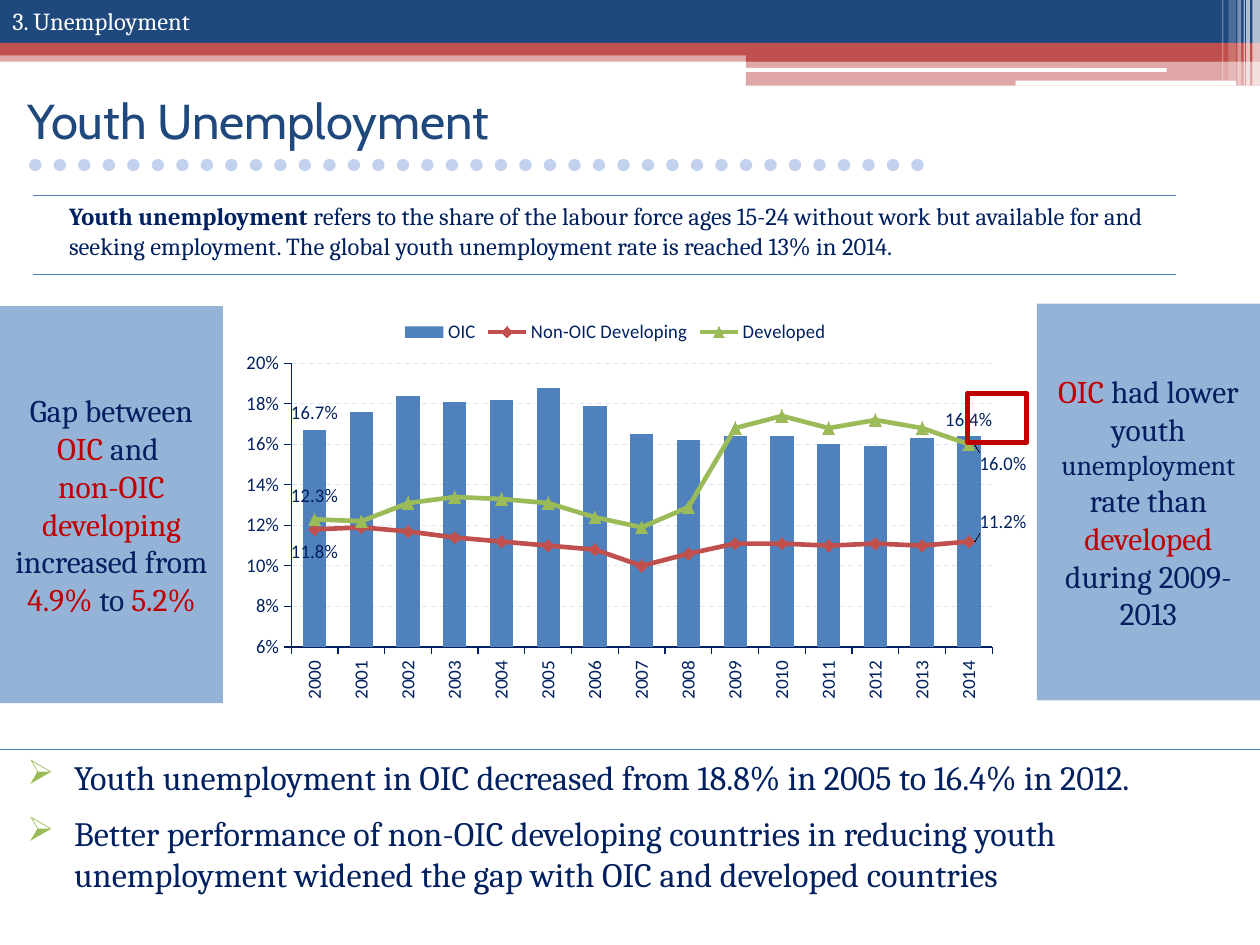
from lxml import etree
from pptx import Presentation
from pptx.chart.data import CategoryChartData
from pptx.dml.color import RGBColor
from pptx.enum.chart import XL_CHART_TYPE as ChartType, XL_LABEL_POSITION as Place
from pptx.enum.chart import XL_LEGEND_POSITION as LegendPlace, XL_MARKER_STYLE as Marker, XL_TICK_MARK as Tick
from pptx.enum.dml import MSO_LINE as Dash
from pptx.enum.shapes import MSO_CONNECTOR as Connector, MSO_SHAPE as Shape
from pptx.enum.text import MSO_ANCHOR as Anchor, PP_ALIGN as Align
from pptx.oxml import parse_xml
from pptx.oxml.ns import nsdecls, qn
from pptx.util import Inches, Pt

COLORS = {
    name: RGBColor.from_string(value) for name, value in {
        "white": "FFFFFF", "navy": "1F497D", "brick": "C0504D", "ink": "002060",
        "red": "C00000", "panel": "95B3D7", "blue": "4F81BD", "green": "9BBB59",
        "dots": "C2D1ED", "grid": "DCE6F2",
    }.items()
}

deck = Presentation()
deck.slide_width, deck.slide_height = Inches(10), Inches(7.5)
page = deck.slides.add_slide(deck.slide_layouts[6])


def add_block(at, fill=None, alpha=100, kind=Shape.RECTANGLE):
    block = page.shapes.add_shape(kind, *map(Inches, at))
    block.shadow.inherit = False
    block.line.fill.background()
    if fill is None:
        block.fill.background()
        return block
    block.fill.solid()
    block.fill.fore_color.rgb = COLORS[fill]
    if alpha < 100:
        color = block.fill._xPr.find(".//" + qn("a:srgbClr"))
        etree.SubElement(color, qn("a:alpha")).set("val", str(alpha * 1000))
    return block


def add_runs(para, runs, font="Cambria"):
    for text, size, color, bold in runs:
        span = para.add_run()
        span.text = text
        span.font.name, span.font.size, span.font.bold = font, Pt(size), bold
        span.font.color.rgb = COLORS[color]


for at, fill, alpha, kind in [
    ((0, 0.4, 10, 0.09), "brick", 50, Shape.RECTANGLE),
    ((0, 0, 10, 0.34), "navy", 100, Shape.RECTANGLE),
    ((0, 0.34, 10, 0.1), "brick", 100, Shape.RECTANGLE),
    ((5.92, 0.39, 4.08, 0.1), "brick", 100, Shape.RECTANGLE),
    ((5.92, 0.48, 4.08, 0.2), "brick", 50, Shape.RECTANGLE),
    ((5.91, 0.54, 3.35, 0.03), "white", 100, Shape.ROUNDED_RECTANGLE),
    ((8.06, 0.64, 1.75, 0.04), "white", 100, Shape.ROUNDED_RECTANGLE),
]:
    add_block(at, fill, alpha, kind)

for left, width, height, alpha in [
    (9.94, 0.06, 0.68, 65), (9.89, 0.03, 0.68, 65), (9.87, 0.01, 0.68, 60),
    (9.82, 0.03, 0.68, 40), (9.75, 0.06, 0.64, 20), (9.7, 0.01, 0.64, 30),
]:
    add_block((left, 0, width, height), "white", alpha)

for left, right, y, color, weight in [
    (0.28, 7.44, 1.31, "dots", 7), (0.26, 9.33, 1.55, "blue", 0.75),
    (0.26, 9.33, 2.18, "blue", 0.75), (0, 10, 5.95, "blue", 0.75),
]:
    rule = page.shapes.add_connector(Connector.STRAIGHT, Inches(left), Inches(y), Inches(right), Inches(y))
    rule.line.color.rgb, rule.line.width = COLORS[color], Pt(weight)
    if color == "dots":
        rule.line.dash_style = Dash.ROUND_DOT
        rule.line._get_or_add_ln().set("cap", "rnd")
    etree.SubElement(rule._element.spPr, qn("a:effectLst"))

for at, font, anchor, indent, before, runs in [
    ((0.12, 0.52, 9.37, 0.87), "Cabin", Anchor.MIDDLE, 0, 0, [("Youth Unemployment", 28, "navy", False)]),
    ((0, 0, 4.37, 0.34), "Cambria", Anchor.TOP, 0, 0, [("3. Unemployment", 14, "white", False)]),
    ((0.33, 1.55, 9, 0.63), "Cambria", Anchor.TOP, 0.12, 3, [
        ("Youth unemployment ", 14, "ink", True),
        ("refers to the share of the labour force ages 15-24 without work but available for and seeking "
         "employment. The global youth unemployment rate is reached 13% in 2014.", 14, "ink", False)]),
]:
    box = page.shapes.add_textbox(*map(Inches, at))
    box.text_frame.word_wrap = True
    box.text_frame.vertical_anchor = anchor
    para = box.text_frame.paragraphs[0]
    para.space_before = Pt(before)
    para._p.get_or_add_pPr().set("marL", str(Inches(indent)))
    add_runs(para, runs, font)

findings = page.shapes.add_textbox(Inches(0), Inches(5.95), Inches(10), Inches(1.55)).text_frame
findings.word_wrap = True
for index, text in enumerate([
    "Youth unemployment in OIC decreased from 18.8% in 2005 to 16.4% in 2012.",
    "Better performance of non-OIC developing countries in reducing youth unemployment widened "
    "the gap with OIC and developed countries",
]):
    para = findings.add_paragraph() if index else findings.paragraphs[0]
    para.space_before, para.space_after = Pt(3), Pt(6)
    props = para._p.get_or_add_pPr()
    props.set("marL", str(Inches(0.49)))
    props.set("indent", str(Inches(-0.37)))
    bullet_color = etree.SubElement(props, qn("a:buClr"))
    etree.SubElement(bullet_color, qn("a:srgbClr")).set("val", str(COLORS["green"]))
    etree.SubElement(props, qn("a:buChar")).set("char", "➢")
    add_runs(para, [(text, 19.5, "ink", False)])

for left, top, paragraphs in [
    (0, 2.43, [
        [("Gap between ", 18, "ink"), ("OIC", 18, "red"), (" and ", 18, "ink")],
        [("non-OIC developing ", 18, "red"), ("increased from ", 18, "ink"), ("4.9% ", 18, "red"),
         ("to ", 18, "ink"), ("5.2%", 18, "red")]]),
    (8.23, 2.41, [
        [("OIC ", 18, "red"), ("had lower youth ", 18, "ink"), ("unemployment ", 16, "ink"),
         ("rate than ", 18, "ink"), ("developed ", 18, "red"), ("during 2009-2013", 18, "ink")]]),
]:
    frame = add_block((left, top, 1.77, 3.15), "panel").text_frame
    frame.word_wrap = True
    frame.vertical_anchor = Anchor.MIDDLE
    for index, runs in enumerate(paragraphs):
        para = frame.add_paragraph() if index else frame.paragraphs[0]
        para.alignment = Align.CENTER
        add_runs(para, [(*run, False) for run in runs])

rates = {
    "OIC": [16.7, 17.6, 18.4, 18.1, 18.2, 18.8, 17.9, 16.5, 16.2, 16.4, 16.4, 16.0, 15.9, 16.3, 16.4],
    "Non-OIC Developing": [11.8, 11.9, 11.7, 11.4, 11.2, 11.0, 10.8, 10.0, 10.6, 11.1, 11.1, 11.0, 11.1, 11.0, 11.2],
    "Developed": [12.3, 12.2, 13.1, 13.4, 13.3, 13.1, 12.4, 11.9, 12.9, 16.8, 17.4, 16.8, 17.2, 16.8, 16.0],
}
data = CategoryChartData(number_format="0.0%")
data.categories = [str(year) for year in range(2000, 2015)]
for name, values in rates.items():
    data.add_series(name, [round(value / 100, 3) for value in values])
chart = page.shapes.add_chart(
    ChartType.COLUMN_CLUSTERED, Inches(1.85), Inches(2.43), Inches(6.3), Inches(3.15), data).chart
chart.has_title = False
chart.font.name, chart.font.size, chart.font.color.rgb = "Calibri", Pt(11), COLORS["ink"]
chart.has_legend = True
chart.legend.position, chart.legend.include_in_layout = LegendPlace.TOP, False

columns = chart.plots[0]
columns.gap_width, columns.vary_by_categories = 100, False
bars = columns._element
line_plot = parse_xml(
    f'<c:lineChart {nsdecls("c")}><c:grouping val="standard"/><c:varyColors val="0"/>'
    '<c:marker val="1"/></c:lineChart>')
plot_marker = line_plot.find(qn("c:marker"))
for series_xml in bars.findall(qn("c:ser"))[1:]:
    for invert in series_xml.findall(qn("c:invertIfNegative")):
        series_xml.remove(invert)
    plot_marker.addprevious(series_xml)
for axis_id in bars.findall(qn("c:axId")):
    etree.SubElement(line_plot, qn("c:axId")).set("val", axis_id.get("val"))
bars.addnext(line_plot)

plot_area = bars.getparent()
for layout in plot_area.findall(qn("c:layout")):
    plot_area.remove(layout)
plot_area.insert(0, parse_xml(
    f'<c:layout {nsdecls("c")}><c:manualLayout><c:layoutTarget val="inner"/>'
    '<c:xMode val="edge"/><c:yMode val="edge"/><c:x val="0.076"/><c:y val="0.144"/>'
    '<c:w val="0.917"/><c:h val="0.715"/></c:manualLayout></c:layout>'))

for series, color, marker, first, last, shift in zip(
    [series for plot in chart.plots for series in plot.series],
    ["blue", "brick", "green"],
    [None, Marker.DIAMOND, Marker.TRIANGLE],
    [Place.OUTSIDE_END, Place.BELOW, Place.ABOVE],
    [Place.OUTSIDE_END, Place.RIGHT, Place.RIGHT],
    [0, -0.05, 0.05],
):
    if marker is None:
        fill = series.format.fill
    else:
        series.smooth = False
        series.format.line.color.rgb, series.format.line.width = COLORS[color], Pt(2.75)
        series.marker.style, series.marker.size = marker, 7
        series.marker.format.line.color.rgb = COLORS[color]
        fill = series.marker.format.fill
    fill.solid()
    fill.fore_color.rgb = COLORS[color]
    series.data_labels.show_value = False
    for index, place in [(0, first), (14, last)]:
        series.points[index].data_label.position = place
    if shift:
        label_id = series._element.findall(".//" + qn("c:dLbl"))[-1].find(qn("c:idx"))
        label_id.addnext(parse_xml(
            f'<c:layout {nsdecls("c")}><c:manualLayout><c:x val="0"/><c:y val="{shift}"/>'
            '</c:manualLayout></c:layout>'))

years, percent = chart.category_axis, chart.value_axis
for axis in (years, percent):
    axis.major_tick_mark, axis.minor_tick_mark = Tick.OUTSIDE, Tick.NONE
    axis.format.line.color.rgb, axis.format.line.width = COLORS["ink"], Pt(0.75)
    axis.tick_labels.font.size = Pt(11)
years._element.find(qn("c:txPr")).find(qn("a:bodyPr")).set("rot", "-5400000")
percent.minimum_scale, percent.maximum_scale, percent.major_unit = 0.06, 0.2, 0.02
percent.tick_labels.number_format, percent.tick_labels.number_format_is_linked = "0%", False
grid = percent.major_gridlines.format.line
grid.color.rgb, grid.width, grid.dash_style = COLORS["grid"], Pt(0.75), Dash.DASH

highlight = add_block((7.68, 3.12, 0.47, 0.39))
highlight.line.color.rgb, highlight.line.width = COLORS["red"], Pt(3)

deck.save("out.pptx")
